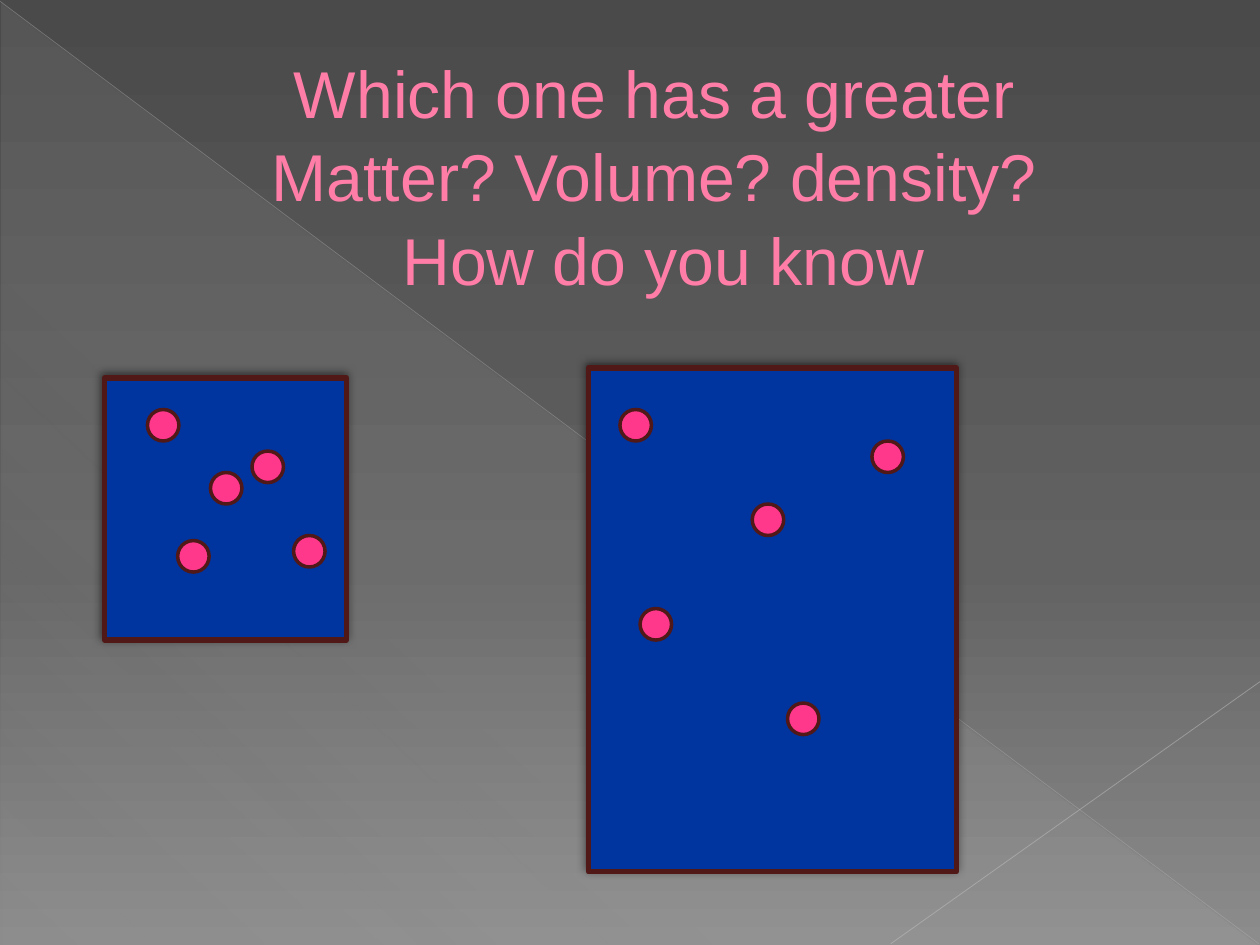
from lxml.etree import SubElement
from pptx import Presentation
from pptx.dml.color import RGBColor
from pptx.enum.shapes import MSO_CONNECTOR, MSO_SHAPE
from pptx.enum.text import MSO_ANCHOR, MSO_AUTO_SIZE, PP_ALIGN
from pptx.oxml.ns import qn
from pptx.util import Emu, Pt

EMU_PER_PX = 9144  # 100 px to the inch

PINK = RGBColor(0xFF, 0x38, 0x8C)
TITLE_PINK = RGBColor(0xFF, 0x7D, 0xA7)
TITLE_EDGE = RGBColor(0xB1, 0x27, 0x61)
BLUE = RGBColor(0x00, 0x34, 0x9E)
MAROON = RGBColor(0x51, 0x18, 0x18)
BLACK = RGBColor(0, 0, 0)
DARK_GRAY = RGBColor(0x4A, 0x4A, 0x4A)
MIDDLE_GRAY = RGBColor(0x62, 0x62, 0x62)
LIGHT_GRAY = RGBColor(0x8C, 0x8C, 0x8C)
PALE_GRAY = RGBColor(0xD2, 0xD2, 0xD2)
LONG_LINE_GRAY = RGBColor(0xBF, 0xBF, 0xBF)
SHORT_LINE_GRAY = RGBColor(0xC6, 0xC6, 0xC6)

TITLE_FONT = {"name": "Arial", "size": Pt(37.8), "bold": False}
TITLE_PARAGRAPH = {"alignment": PP_ALIGN.CENTER, "line_spacing": 1.05}
TITLE_FRAME = {"word_wrap": True, "auto_size": MSO_AUTO_SIZE.NONE,
               "vertical_anchor": MSO_ANCHOR.MIDDLE}


def px(length):
    return Emu(length * EMU_PER_PX)


def set_all(target, values):
    for name, value in values.items():
        setattr(target, name, value)


def add_color(parent, color, opacity=100):
    element = SubElement(parent, qn("a:srgbClr"), val=str(color))
    if opacity < 100:
        SubElement(element, qn("a:alpha"), val=str(opacity * 1000))


class SlideBuilder:
    def __init__(self, presentation):
        self.slide = presentation.slides.add_slide(presentation.slide_layouts[5])
        self.shapes = self.slide.shapes

    def gradient(self, fill, owner, stops, angle):
        fill.gradient()
        gradient = next(owner.iter(qn("a:gradFill")))
        for child in list(gradient):
            gradient.remove(child)
        stop_list = SubElement(gradient, qn("a:gsLst"))
        for position, color, opacity in stops:
            stop = SubElement(stop_list, qn("a:gs"), pos=str(position * 1000))
            add_color(stop, color, opacity)
        SubElement(gradient, qn("a:lin"), ang=str(angle * 60000), scaled="0")

    def background(self, stops, angle):
        self.gradient(self.slide.background.fill, self.slide._element, stops, angle)

    def shape(self, kind, left, top, width, height):
        shape = self.shapes.add_shape(kind, px(left), px(top), px(width), px(height))
        shape.shadow.inherit = False
        return shape

    def triangle(self, box, stops, angle):
        shape = self.shape(MSO_SHAPE.RIGHT_TRIANGLE, *box)
        shape.line.fill.background()
        self.gradient(shape.fill, shape._element, stops, angle)

    def line(self, start, end, color, width, opacity):
        connector = self.shapes.add_connector(
            MSO_CONNECTOR.STRAIGHT, *map(px, start + end))
        connector.line.color.rgb = color
        connector.line.width = Pt(width)
        color_element = next(connector._element.spPr.iter(qn("a:srgbClr")))
        SubElement(color_element, qn("a:alpha"), val=str(opacity * 1000))
        SubElement(connector._element.spPr, qn("a:effectLst"))

    def title(self, text, left, top, width, height):
        title = self.shapes.title
        set_all(title, {"left": px(left), "top": px(top),
                        "width": px(width), "height": px(height)})
        self.shapes._spTree.append(title._element)  # in front of the backdrop
        set_all(title.text_frame, TITLE_FRAME)
        paragraph = title.text_frame.paragraphs[0]
        paragraph.text = text
        set_all(paragraph, TITLE_PARAGRAPH)
        properties = paragraph._p.get_or_add_pPr()
        properties.set("marL", str(px(53)))
        properties.set("indent", "0")
        for run in paragraph.runs:
            set_all(run.font, TITLE_FONT)
            run.font.color.rgb = TITLE_PINK
            outline = SubElement(run.font._element, qn("a:ln"), w=str(Pt(0.5)))
            add_color(SubElement(outline, qn("a:solidFill")), TITLE_EDGE)
            run.font._element.insert(0, outline)

    def filled(self, kind, box, color, line_width):
        shape = self.shape(kind, *box)
        shape.fill.solid()
        shape.fill.fore_color.rgb = color
        shape.line.color.rgb = MAROON
        shape.line.width = Pt(line_width)
        return shape

    def container(self, *box):
        shape = self.filled(MSO_SHAPE.RECTANGLE, box, BLUE, 3)
        effects = shape._element.spPr.find(qn("a:effectLst"))
        shadow = SubElement(effects, qn("a:outerShdw"), blurRad=str(Pt(5)),
                            dist=str(Pt(2)), dir=str(245 * 60000), rotWithShape="0")
        add_color(shadow, BLACK, 50)

    def particle(self, left, top):
        self.filled(MSO_SHAPE.FLOWCHART_CONNECTOR, (left, top, 25, 25), PINK, 2)


def main():
    presentation = Presentation()
    set_all(presentation, {"slide_width": px(1000), "slide_height": px(750)})
    builder = SlideBuilder(presentation)

    # Backdrop
    builder.background([(0, DARK_GRAY, 100), (60, MIDDLE_GRAY, 100),
                        (100, LIGHT_GRAY, 100)], 90)
    builder.triangle((1, 2, 998, 748), [(0, PALE_GRAY, 10), (70, PALE_GRAY, 8),
                                        (100, PALE_GRAY, 1)], 133)
    builder.line((0, 1), (999, 749), LONG_LINE_GRAY, 0.39, 35)
    builder.line((1000, 541), (707, 749), SHORT_LINE_GRAY, 0.47, 45)

    # Question
    builder.title("Which one has a greater \vMatter? Volume? density? \v"
                  "How do you know", 50, 75, 900, 125)

    # Small and large container
    builder.container(83, 300, 192, 208)
    builder.container(467, 292, 292, 400)

    # Five particles in each container
    small = [(117, 325), (200, 358), (167, 375), (141, 429), (233, 425)]
    large = [(625, 558), (692, 350), (508, 483), (597, 400), (492, 325)]
    for left, top in small + large:
        builder.particle(left, top)

    presentation.save("out.pptx")


if __name__ == "__main__":
    main()
